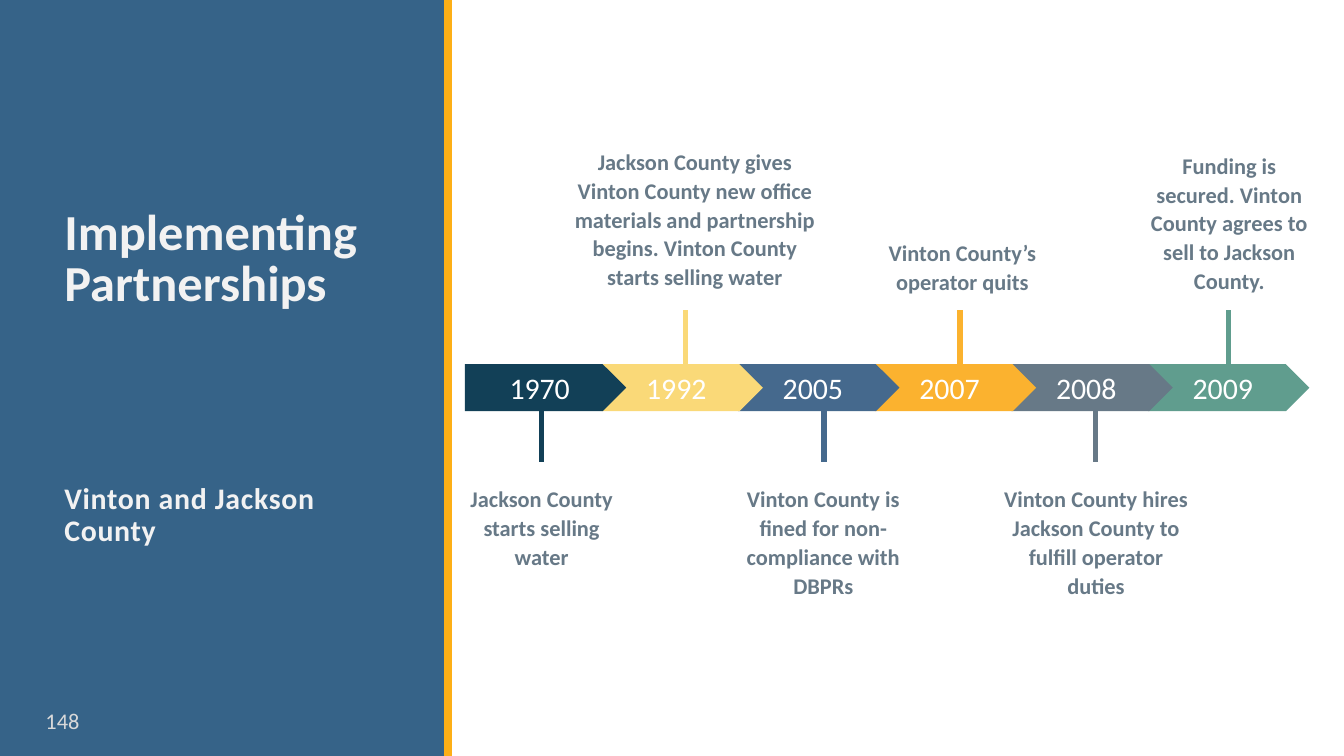
from pptx import Presentation
from pptx.dml.color import RGBColor
from pptx.enum import shapes, text
from pptx.oxml.ns import qn
from pptx.util import Pt
from lxml import etree

FONT = "Calibri"
BLUE = RGBColor(0x36, 0x63, 0x88)
GOLD = RGBColor(0xFD, 0xAF, 0x17)
PALE = RGBColor(0xF2, 0xF2, 0xF2)
GRAY = RGBColor(0xD9, 0xD9, 0xD9)
WHITE = RGBColor(0xFF, 0xFF, 0xFF)
NAVY = RGBColor(0x12, 0x40, 0x57)
SAND = RGBColor(0xFA, 0xD9, 0x78)
STEEL = RGBColor(0x45, 0x69, 0x8D)
AMBER = RGBColor(0xFB, 0xB2, 0x2F)
SLATE = RGBColor(0x67, 0x79, 0x87)
GREEN = RGBColor(0x60, 0x9D, 0x8E)

TOP, MID = text.MSO_ANCHOR.TOP, text.MSO_ANCHOR.MIDDLE
LOW = text.MSO_ANCHOR.BOTTOM
LEFT, CENTER = text.PP_ALIGN.LEFT, text.PP_ALIGN.CENTER

ARROW_W, ARROW_H, STEP = 86.4, 25.2, 73.2
STEM = 28.8

# year, colour, stem x, label (left, top, width, height), label text;
# places are relative to the left end and top of the arrow band
EVENTS = [
    ("1970", NAVY, 41, (-12.2, 60.5, 106.6, 46),
     "Jackson County starts selling water"),
    ("1992", SAND, 118.2, (47.6, -120.2, 151.2, 109.4),
     "Jackson County gives Vinton County new office materials and "
     "partnership begins. Vinton County starts selling water"),
    ("2005", STEEL, 192.4, (135.5, 60.5, 113, 72),
     "Vinton County is fined for non-compliance with DBPRs"),
    ("2007", AMBER, 265.1, (216.8, -71.3, 99.4, 44.6),
     "Vinton County’s operator quits"),
    ("2008", SLATE, 337.8, (281.6, 60.5, 113, 44),
     "Vinton County hires Jackson County to fulfill operator duties"),
    ("2009", GREEN, 409.1, (355.1, -118.1, 108.7, 45.4),
     "Funding is secured. Vinton County agrees to sell to Jackson County."),
]


def write(shape, words, size, color, bold=False, align=LEFT, anchor=TOP,
          lines=1.0):
    frame = shape.text_frame
    frame.word_wrap = True
    frame.vertical_anchor = anchor
    para = frame.paragraphs[0]
    para.text = words
    para.alignment = align
    para.line_spacing = lines
    font = para.font
    font.name, font.size, font.bold = FONT, Pt(size), bold
    font.color.rgb = color
    return para


def add_text(slide, box, words, size, color, **style):
    shape = slide.shapes.add_textbox(*map(Pt, box))
    return write(shape, words, size, color, **style)


def add_block(slide, kind, box, color):
    shape = slide.shapes.add_shape(kind, *map(Pt, box))
    shape.shadow.inherit = False
    shape.fill.solid()
    shape.fill.fore_color.rgb = color
    shape.line.fill.background()
    return shape


def add_stem(slide, x, y, color):
    line = slide.shapes.add_connector(
        shapes.MSO_CONNECTOR.STRAIGHT, Pt(x), Pt(y), Pt(x), Pt(y + STEM))
    line.line.color.rgb = color
    line.line.width = Pt(3)
    etree.SubElement(line._element.spPr, qn("a:effectLst"))


def add_panel(slide, x, y, w, h):
    rect = shapes.MSO_SHAPE.RECTANGLE
    add_block(slide, rect, (x, y, w, h), BLUE)
    bar = add_block(slide, rect, (x + w - 0.7, y, 3.6, h), GOLD)
    bar.line.color.rgb = GOLD
    bar.line.width = Pt(1)
    add_text(slide, (x + 27.4, y + 35.3, 188.6, 135.4),
             "Implementing Partnerships", 27, PALE, bold=True,
             anchor=LOW, lines=0.85)
    place = add_text(slide, (x + 27.4, y + 255.6, 188.6, 118),
                     "Vinton and Jackson County", 16, PALE, bold=True,
                     lines=0.9)
    place.runs[0]._r.get_or_add_rPr().set("spc", "40")
    add_text(slide, (x + 7.9, y + 375.1, 51.1, 21.6), "148", 12, GRAY,
             align=CENTER, anchor=MID)


def add_timeline(slide, x, y):
    """Draw the arrow band with its left top corner at x, y."""
    for _, color, stem, (left, top, w, h), words in EVENTS:
        start = y - STEM if top < 0 else y + ARROW_H - 1.5
        add_stem(slide, x + stem, start, color)
        add_text(slide, (x + left, y + top, w, h), words, 12, SLATE,
                 bold=True, align=CENTER, lines=1.07)
    # Later arrows lie beneath earlier ones.
    for i, (year, color, *_) in reversed(list(enumerate(EVENTS))):
        arrow = add_block(slide, shapes.MSO_SHAPE.PENTAGON,
                          (x + i * STEP, y, ARROW_W, ARROW_H), color)
        write(arrow, year, 16, WHITE, align=CENTER, anchor=MID)


def main():
    deck = Presentation()
    deck.slide_width, deck.slide_height = Pt(720), Pt(405)
    slide = deck.slides.add_slide(deck.slide_layouts[6])
    add_panel(slide, 0, 0, 239, 405)
    add_timeline(slide, 249.1, 195.1)
    deck.save("out.pptx")


if __name__ == "__main__":
    main()
